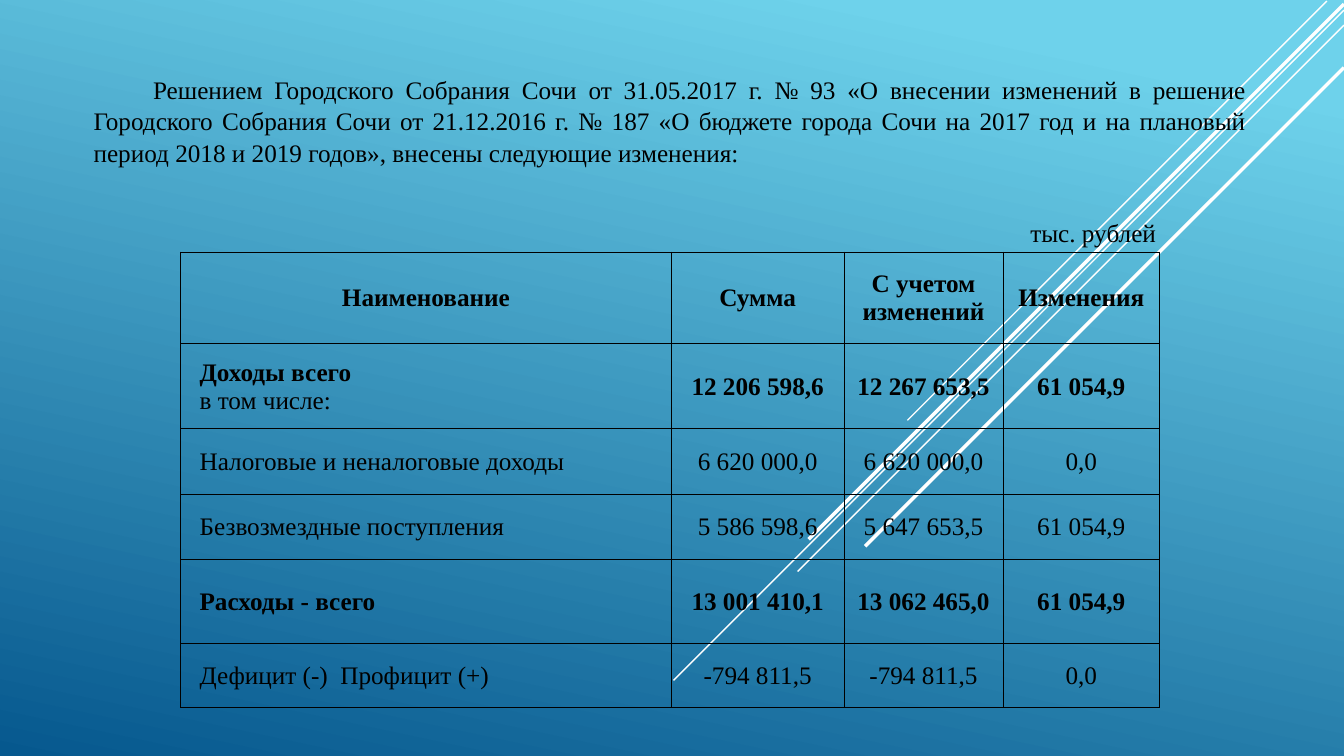
from lxml.etree import SubElement
from pptx import Presentation
from pptx.dml.color import RGBColor
from pptx.enum.shapes import MSO_CONNECTOR
from pptx.enum.text import MSO_ANCHOR, PP_ALIGN
from pptx.oxml.ns import qn
from pptx.util import Inches, Pt

COLORS = {"sky": "6ED2EB", "deep": "06588E", "ray": "FFFFFF", "ink": "000000"}
FONT = {"name": "Times New Roman", "size": Pt(18)}
RAYS = [
    (13.16, 0.01, 4.16, 1),
    (13.33, 0.1, 6.65, 1),
    (13.33, 0.25, 5.42, 1),
    (13.33, 0.04, 5.31, 2.5),
    (13.33, 0.67, 4.75, 2.5),
]
INTRO = (
    "Решением Городского Собрания Сочи от 31.05.2017 г. № 93 «О внесении изменений "
    "в решение Городского Собрания Сочи от 21.12.2016 г. № 187 «О бюджете города Сочи "
    "на 2017 год и на плановый период 2018 и 2019 годов», внесены следующие изменения:"
)
COLUMN_WIDTHS = [4.87, 1.71, 1.58, 1.55]
ROW_HEIGHTS = [0.91, 0.84, 0.65, 0.65, 0.83, 0.64]
BUDGET = [
    ("Наименование", "Сумма", "С учетом изменений", "Изменения"),
    ("Доходы всего\nв том числе:", "12 206 598,6", "12 267 653,5", "61 054,9"),
    ("Налоговые и неналоговые доходы", "6 620 000,0", "6 620 000,0", "0,0"),
    ("Безвозмездные поступления", "5 586 598,6", "5 647 653,5", "61 054,9"),
    ("Расходы - всего", "13 001 410,1", "13 062 465,0", "61 054,9"),
    ("Дефицит (-)  Профицит (+)", "-794 811,5", "-794 811,5", "0,0"),
]
BOLD_ROWS = {0, 1, 4}


def color(name):
    """Return a named colour."""
    return RGBColor.from_string(COLORS[name])


def apply_format(target, values):
    """Set attributes of an object from a dict."""
    for name, value in values.items():
        setattr(target, name, value)


def write(paragraph, text, alignment, bold=False):
    """Write one run of body text into a paragraph."""
    paragraph.alignment = alignment
    run = paragraph.add_run()
    run.text = text
    apply_format(run.font, {**FONT, "bold": bold})
    run.font.color.rgb = color("ink")


def paint_background(slide):
    """Fill the slide with the blue gradient."""
    fill = slide.background.fill
    fill.gradient()
    fill.gradient_angle = 258
    for stop, name, position in zip(fill.gradient_stops, ("sky", "deep"), (0.1, 1)):
        stop.color.rgb = color(name)
        stop.position = position


def add_rays(slide):
    """Draw the diagonal rays, each falling at 45 degrees."""
    for left, top, drop, weight in RAYS:
        ends = (left, top, left - drop, top + drop)
        ray = slide.shapes.add_connector(MSO_CONNECTOR.STRAIGHT, *map(Inches, ends))
        ray.line.color.rgb = color("ray")
        ray.line.width = Pt(weight)
        SubElement(ray._element.spPr, qn("a:effectLst"))


def add_text(slide, box, text, alignment, indent=0):
    """Place a wrapped paragraph with a first-line indent in a box."""
    frame = slide.shapes.add_textbox(*map(Inches, box)).text_frame
    frame.word_wrap = True
    paragraph = frame.paragraphs[0]
    write(paragraph, text, alignment)
    paragraph.line_spacing = 1.05
    paragraph._p.get_or_add_pPr().set("indent", str(Inches(indent)))


def add_borders(cell):
    """Outline a cell with thin lines."""
    properties = cell._tc.get_or_add_tcPr()
    for side in ("a:lnL", "a:lnR", "a:lnT", "a:lnB"):
        line = SubElement(properties, qn(side), w=str(Pt(0.5)))
        fill = SubElement(line, qn("a:solidFill"))
        SubElement(fill, qn("a:srgbClr"), val=COLORS["ink"])


def fill_cell(cell, text, is_label, bold):
    """Format a cell and write its lines, the first one bold if asked."""
    apply_format(cell, {
        "vertical_anchor": MSO_ANCHOR.MIDDLE,
        "margin_left": Inches(0.19 if is_label else 0.01),
        "margin_right": Inches(0.01),
        "margin_top": Inches(0.01),
        "margin_bottom": 0,
    })
    add_borders(cell)
    cell.fill.background()
    frame = cell.text_frame
    alignment = PP_ALIGN.LEFT if is_label else PP_ALIGN.CENTER
    for index, line in enumerate(text.split("\n")):
        paragraph = frame.add_paragraph() if index else frame.paragraphs[0]
        write(paragraph, line, alignment, bold and index == 0)


def add_budget_table(slide, left, top):
    """Build the budget table from its top left corner."""
    box = (left, top, sum(COLUMN_WIDTHS), sum(ROW_HEIGHTS))
    table = slide.shapes.add_table(
        len(ROW_HEIGHTS), len(COLUMN_WIDTHS), *map(Inches, box)
    ).table
    apply_format(table, {"first_row": False, "horz_banding": False})
    for column, width in zip(table.columns, COLUMN_WIDTHS):
        column.width = Inches(width)
    for row_index, (height, values) in enumerate(zip(ROW_HEIGHTS, BUDGET)):
        table.rows[row_index].height = Inches(height)
        for column_index, text in enumerate(values):
            is_label = row_index > 0 and column_index == 0
            cell = table.cell(row_index, column_index)
            fill_cell(cell, text, is_label, row_index in BOLD_ROWS)


def main():
    """Build the slide and save it."""
    presentation = Presentation()
    apply_format(presentation, {"slide_width": Inches(13.33), "slide_height": Inches(7.5)})
    slide = presentation.slides.add_slide(presentation.slide_layouts[6])
    paint_background(slide)
    add_rays(slide)
    add_text(slide, (10.12, 2.09, 1.91, 0.4), "тыс. рублей", PP_ALIGN.LEFT)
    add_text(slide, (0.83, 0.67, 11.63, 1.01), INTRO, PP_ALIGN.JUSTIFY, 0.59)
    add_budget_table(slide, 1.79, 2.5)
    presentation.save("out.pptx")


if __name__ == "__main__":
    main()
